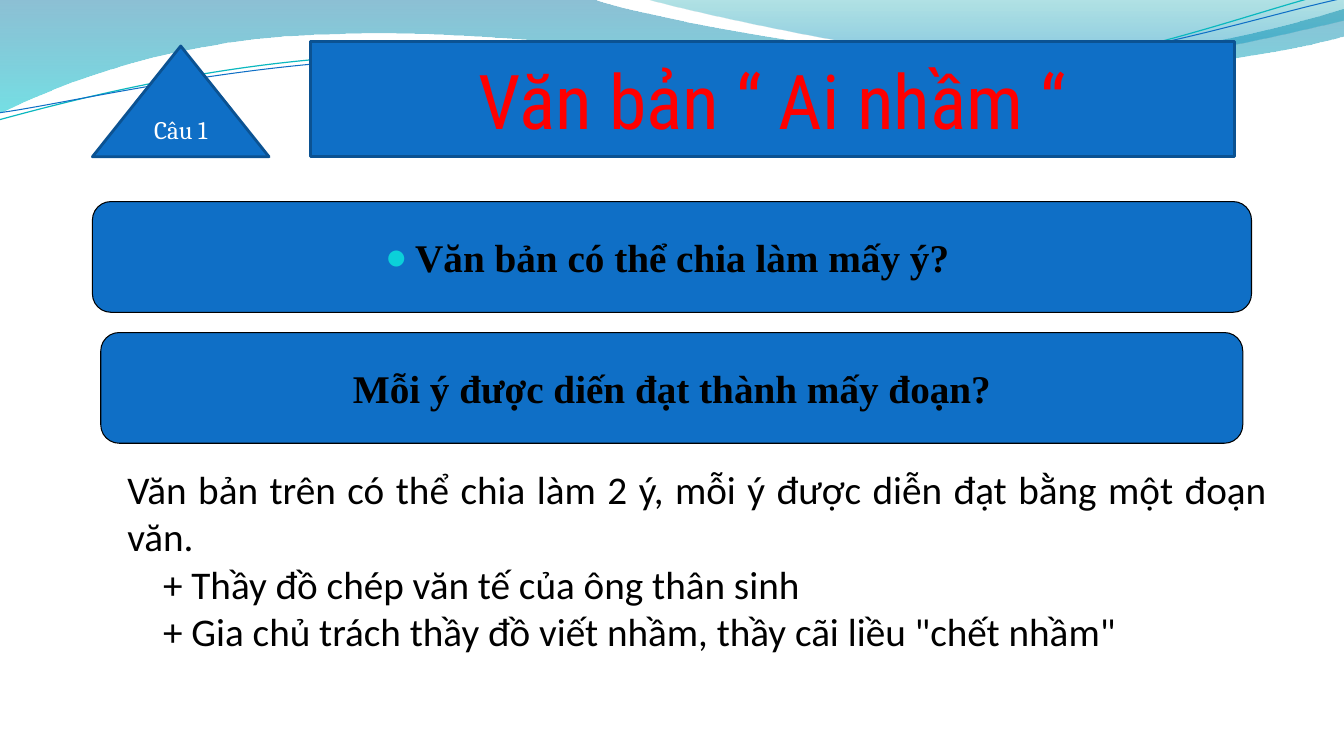
from lxml import etree
from pptx import Presentation
from pptx.dml.color import RGBColor
from pptx.enum.shapes import MSO_SHAPE
from pptx.enum.text import MSO_ANCHOR, PP_ALIGN
from pptx.oxml.ns import qn
from pptx.util import Cm, Pt

TRIANGLE, RECT = MSO_SHAPE.ISOSCELES_TRIANGLE, MSO_SHAPE.RECTANGLE
ROUNDED = MSO_SHAPE.FLOWCHART_ALTERNATE_PROCESS
CENTER, JUSTIFY = PP_ALIGN.CENTER, PP_ALIGN.JUSTIFY
MIDDLE = MSO_ANCHOR.MIDDLE

BLUE = RGBColor(0x0F, 0x6F, 0xC6)
NAVY = RGBColor(0x0B, 0x52, 0x92)
TEAL = RGBColor(0x0A, 0xB8, 0xBF)
DEEP = RGBColor(0x00, 0x74, 0xA1)
AQUA = RGBColor(0x00, 0xC6, 0xCF)
SEA = RGBColor(0x00, 0xA1, 0xA9)
SKY = RGBColor(0x00, 0x8B, 0xBF)
CYAN = RGBColor(0x0B, 0xD0, 0xD9)
RED = RGBColor(0xFF, 0x00, 0x00)
BLACK = RGBColor(0x00, 0x00, 0x00)
WHITE = RGBColor(0xFF, 0xFF, 0xFF)

SERIF = "Times New Roman"
TILT = -2.7  # degrees


def write(para, text, font, size, color, bold=False, align=CENTER, indent=0):
    para.alignment = align
    if indent:
        para._p.get_or_add_pPr().set("marL", str(Cm(indent)))
    run = para.add_run()
    run.text = text
    run.font.name, run.font.size = font, Pt(size)
    run.font.bold, run.font.color.rgb = bold, color


def bullet(para, char, color, size, hang):
    props = para._p.get_or_add_pPr()
    props.set("marL", str(Cm(hang)))
    props.set("indent", str(-Cm(hang)))
    tint = etree.SubElement(props, qn("a:buClr"))
    etree.SubElement(tint, qn("a:srgbClr"), val=str(color))
    etree.SubElement(props, qn("a:buSzPct"), val=str(size * 1000))
    etree.SubElement(props, qn("a:buFont"), typeface=SERIF)
    etree.SubElement(props, qn("a:buChar"), char=char)


class Board:
    def __init__(self, slide):
        self.shapes = slide.shapes
        self.fill = BLUE

    def free(self, start, parts, close):
        """A part is a line end (x, y), or two handles and the end of a curve."""
        pen = self.shapes.build_freeform(Cm(start[0]), Cm(start[1]))
        pen.add_line_segments([(Cm(x), Cm(y)) for *_, x, y in parts], close=close)
        shape = pen.convert_to_shape()
        shape.shadow.inherit = False
        lines = list(shape._element.spPr.iter(qn("a:lnTo")))
        for line, part in zip(lines, parts):
            if len(part) == 2:
                continue
            bend = etree.Element(qn("a:cubicBezTo"))
            for x, y in zip(part[::2], part[1::2]):
                etree.SubElement(bend, qn("a:pt"), x=str(Cm(x) - shape.left),
                                 y=str(Cm(y) - shape.top))
            line.getparent().replace(line, bend)
        return shape

    def wave(self, start, parts, stops):
        shape = self.free(start, parts, True)
        shape.line.fill.background()
        shape.fill.gradient()
        shape.fill.gradient_angle = 270
        for stop, (place, color, _) in zip(shape.fill.gradient_stops, stops):
            stop.position, stop.color.rgb = place, color
        tints = shape._element.spPr.iter(qn("a:srgbClr"))
        for tint, (_, _, alpha) in zip(list(tints), stops):
            etree.SubElement(tint, qn("a:alpha"), val=str(alpha * 1000))

    def curve(self, start, parts, color, width):
        shape = self.free(start, parts, False)
        shape.rotation = TILT
        shape.fill.background()
        shape.line.color.rgb, shape.line.width = color, Pt(width)

    def panel(self, kind, box, text, edge, width, wrap=True, **style):
        shape = self.shapes.add_shape(kind, *map(Cm, box))
        shape.shadow.inherit = False
        shape.fill.solid()
        shape.fill.fore_color.rgb = self.fill
        shape.line.color.rgb, shape.line.width = edge, Pt(width)
        frame = shape.text_frame
        frame.word_wrap, frame.vertical_anchor = wrap, MIDDLE
        para = frame.paragraphs[0]
        write(para, text, **style)
        return para

    def note(self, box, lines, **style):
        frame = self.shapes.add_textbox(*map(Cm, box)).text_frame
        frame.word_wrap = True
        for num, (text, indent) in enumerate(lines):
            para = frame.add_paragraph() if num else frame.paragraphs[0]
            write(para, text, indent=indent, **style)


def main():
    deck = Presentation()
    deck.slide_width, deck.slide_height = Cm(33.87), Cm(19.05)
    board = Board(deck.slides.add_slide(deck.slide_layouts[6]))

    # Waves along the top
    board.wave((0, 0), [
        (14.91, -0.03),
        (16.1, 0.43, 22.48, 1.6, 25.68, 1.6),
        (28.91, 1.6, 32.46, 0.66, 33.86, 0.23),
        (33.91, 0.91),
        (33.3, 1.12, 29.46, 1.93, 25.25, 1.91),
        (21.06, 1.91, 12.93, 0.71, 8.71, 0.86),
        (4.37, 0.91, 1.55, 2.11, -0.03, 2.87),
    ], [(0, DEEP, 45), (1, AQUA, 55)])
    board.wave((16.23, -0.03), [
        (17.25, 0.28, 23.09, 1.57, 26.04, 1.65),
        (28.98, 1.75, 32.56, 0.81, 33.86, 0.53),
        (33.86, 0),
    ], [(0, SEA, 30), (0.8, SKY, 45)])

    # Thin tilted lines over the waves
    board.curve((-0.08, 2.22), [
        (1.6, 1.85, 5.37, 1.03, 9.38, 1.05),
        (13.4, 1.06, 20.03, 2.36, 24.1, 2.27),
        (28.17, 2.21, 31.84, 0.9, 33.87, 0.55),
    ], TEAL, 0.85)
    board.curve((-0.04, 2.04), [
        (1.56, 1.9, 5.54, 1.14, 9.61, 1.15),
        (13.65, 1.19, 20.19, 2.23, 24.24, 2.17),
        (28.3, 2.11, 31.92, 1.07, 33.93, 0.75),
    ], BLUE, 0.75)

    # Heading
    board.panel(TRIANGLE, (2.33, 1.16, 4.45, 2.79), "Câu 1", NAVY, 2,
                font="Cambria", size=18, color=WHITE)
    board.panel(RECT, (7.82, 1.04, 23.29, 2.91), "Văn bản “ Ai nhầm “", NAVY, 2,
                font="Roboto Condensed", size=54, color=RED)

    # Questions
    ask = dict(edge=BLACK, width=0.75, wrap=False,
               font=SERIF, size=28, color=BLACK, bold=True)
    first = board.panel(ROUNDED, (2.33, 5.08, 29.21, 2.79),
                        "Văn bản có thể chia làm mấy ý? ", **ask)
    bullet(first, "●", CYAN, 95, 0.76)
    board.panel(ROUNDED, (2.54, 8.38, 28.78, 2.79),
                "Mỗi ý được diến đạt thành mấy đoạn?", **ask)

    # Answer
    board.note((2.96, 11.61, 29.21, 7.44), [
        ("Văn bản trên có thể chia làm 2 ý, mỗi ý được diễn đạt bằng một đoạn văn.", 0),
        ("+ Thầy đồ chép văn tế của ông thân sinh", 0.9),
        ('+ Gia chủ trách thầy đồ viết nhầm, thầy cãi liều "chết nhầm"', 0.9),
    ], font="Calibri", size=28, color=BLACK, align=JUSTIFY)

    deck.save("out.pptx")


if __name__ == "__main__":
    main()
